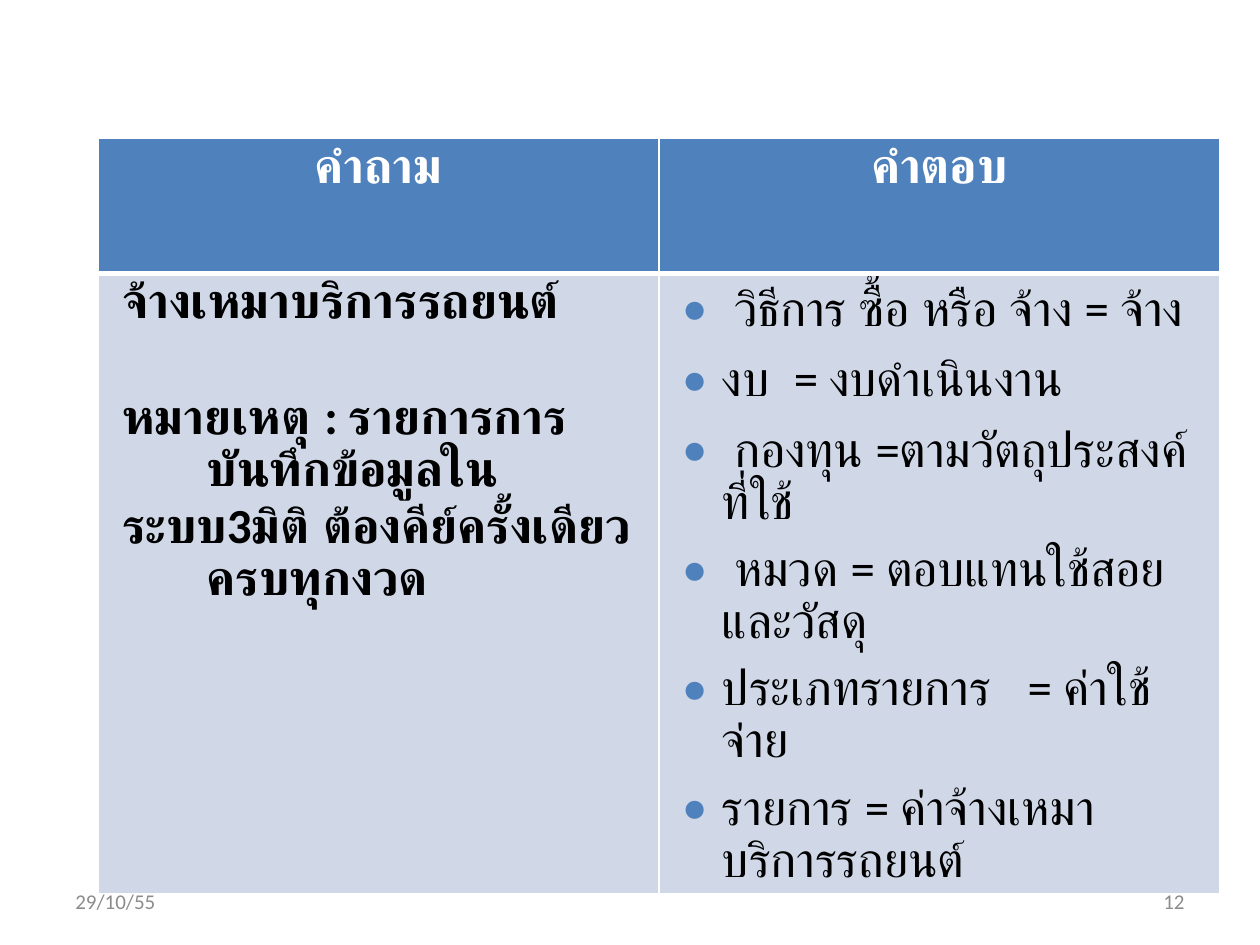
from lxml.etree import SubElement
from pptx import Presentation
from pptx.dml.color import RGBColor as RGB
from pptx.enum.text import MSO_ANCHOR as Anchor, PP_ALIGN as Align
from pptx.oxml.ns import qn
from pptx.util import Inches, Pt

THEME = {
    "font": "Calibri", "text": 28, "foot": 12,
    "blue": "4F81BD", "pale": "D0D8E8", "white": "FFFFFF",
    "black": "000000", "grey": "8C8C8C",
}


def add_run(para, text, size, color, bold=False):
    run = para.add_run()
    run.text = text
    font = run.font
    font.name, font.size, font.bold = THEME["font"], Pt(THEME[size]), bold
    font.color.rgb = RGB.from_string(THEME[color])


def add_node(parent, tag, **attrs):
    return SubElement(parent, qn(tag), attrs)


deck = Presentation()
deck.slide_width, deck.slide_height = Inches(10), Inches(7.5)
slide = deck.slides.add_slide(deck.slide_layouts[6])

# Table grid, fills and borders
table = slide.shapes.add_table(
    2, 2, Inches(0.78), Inches(1.1), Inches(8.9), Inches(5.99)).table
table.horz_banding = False
for col in table.columns:
    col.width = Inches(4.45)
for row, height, fill, top, base in zip(
        table.rows, (1.07, 4.92), ("blue", "pale"), (1, 3), (3, 1)):
    row.height = Inches(height)
    for cell in row.cells:
        props = cell._tc.get_or_add_tcPr()
        for side, width in [("L", 1), ("R", 1), ("T", top), ("B", base)]:
            line = add_node(props, f"a:ln{side}", w=str(Pt(width)))
            solid = add_node(line, "a:solidFill")
            add_node(solid, "a:srgbClr", val=THEME["white"])
        cell.fill.solid()
        cell.fill.fore_color.rgb = RGB.from_string(THEME[fill])

# Headings
for col, text in enumerate(["คำถาม", "คำตอบ"]):
    para = table.cell(0, col).text_frame.paragraphs[0]
    para.alignment = Align.CENTER
    add_run(para, text, "text", "white", bold=True)

# Question with a hanging indent, answers with bullets
asks = [
    "จ้างเหมาบริการรถยนต์",
    "หมายเหตุ : รายการการบันทึกข้อมูลใน",
    "ระบบ3มิติ ต้องคีย์ครั้งเดียวครบทุกงวด",
]
answers = [
    " วิธีการ ซื้อ หรือ จ้าง = จ้าง",
    "งบ  = งบดำเนินงาน",
    " กองทุน =ตามวัตถุประสงค์ที่ใช้",
    " หมวด = ตอบแทนใช้สอยและวัสดุ",
    "ประเภทรายการ   = ค่าใช้จ่าย",
    "รายการ = ค่าจ้างเหมาบริการรถยนต์",
]
columns = [(asks, 0.76, -0.67, (0, 34, 0), False),
           (answers, 0.4, -0.31, (6,) * len(answers), True)]
for col, (lines, margin, indent, gaps, listed) in enumerate(columns):
    frame = table.cell(1, col).text_frame
    for i, (text, gap) in enumerate(zip(lines, gaps)):
        para = frame.add_paragraph() if i else frame.paragraphs[0]
        if gap:
            para.space_before = Pt(gap)
        props = para._p.get_or_add_pPr()
        props.set("marL", str(Inches(margin)))
        props.set("indent", str(Inches(indent)))
        if listed:
            tint = add_node(props, "a:buClr")
            add_node(tint, "a:srgbClr", val=THEME["blue"])
            add_node(props, "a:buSzPct", val="80000")
            add_node(props, "a:buFont", typeface=THEME["font"])
            add_node(props, "a:buChar", char="●")
        add_run(para, text, "text", "black", bold=not listed)

# Date and page number, in front of the table
for left, text, align in [(0.5, "29/10/55", Align.LEFT), (7.17, "12", Align.RIGHT)]:
    box = slide.shapes.add_textbox(Inches(left), Inches(6.95), Inches(2.33), Inches(0.4))
    frame = box.text_frame
    frame.word_wrap = True
    frame.vertical_anchor = Anchor.MIDDLE
    frame.paragraphs[0].alignment = align
    add_run(frame.paragraphs[0], text, "foot", "grey")

deck.save("out.pptx")
